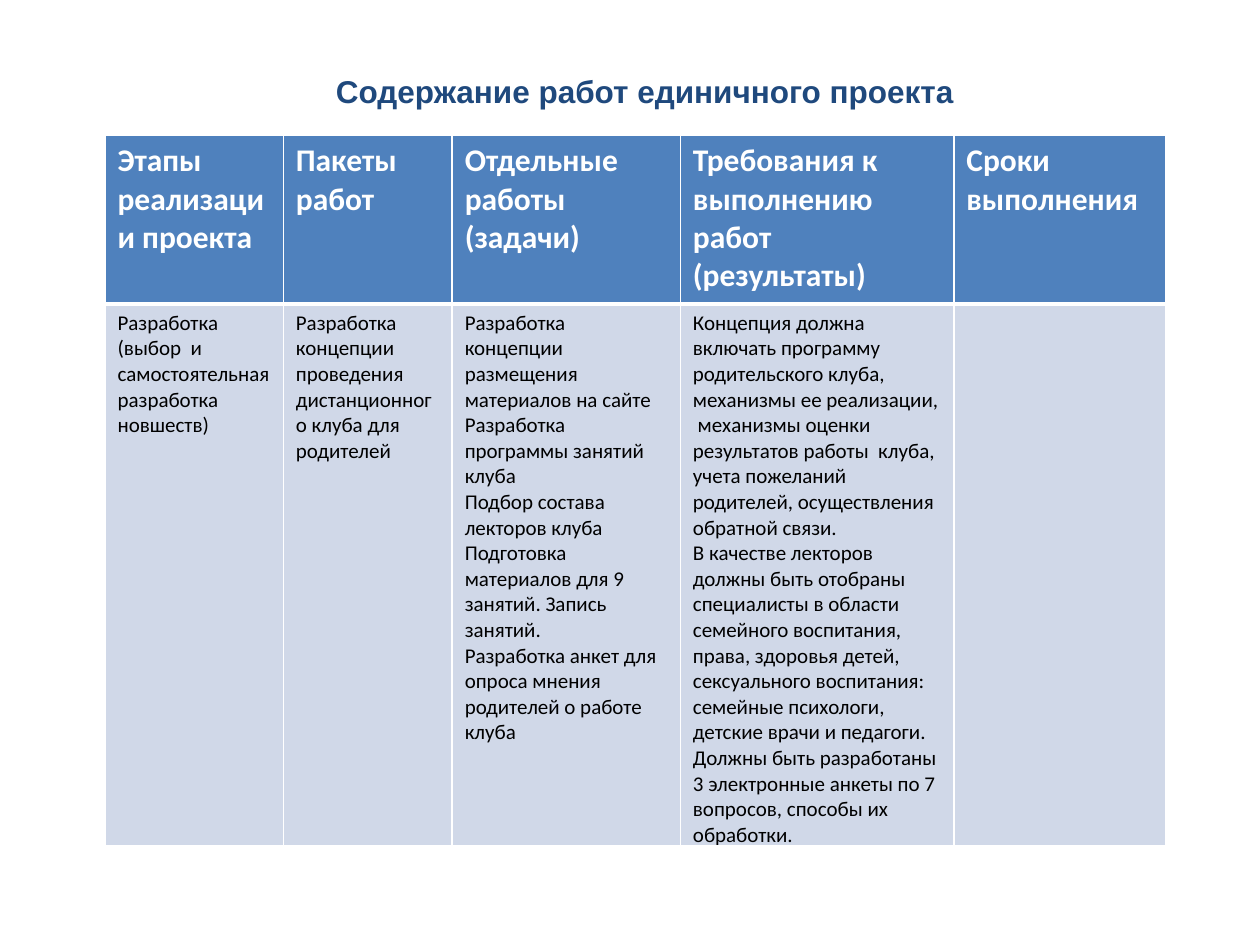
from dataclasses import dataclass

from lxml.etree import SubElement
from pptx import Presentation
from pptx.dml.color import RGBColor
from pptx.enum.text import PP_ALIGN
from pptx.oxml.ns import qn
from pptx.util import Pt


@dataclass(frozen=True)
class Theme:
    title: str = "1F497D"
    header_fill: str = "4F81BD"
    body_fill: str = "D0D8E8"
    white: str = "FFFFFF"
    black: str = "000000"
    title_font: str = "Arial"
    table_font: str = "Calibri"
    large: int = 18
    small: int = 12


THEME = Theme()


def add_text(para, text, font, size, color, bold):
    span = para.add_run()
    span.text = text
    span.font.name = font
    span.font.size = Pt(size)
    span.font.bold = bold
    span.font.color.rgb = RGBColor.from_string(color)


def add_borders(cell, top, bottom):
    """Draw white cell borders; side lines are always 1 point wide."""
    properties = cell._tc.get_or_add_tcPr()
    for tag, width in (("a:lnL", 1), ("a:lnR", 1), ("a:lnT", top), ("a:lnB", bottom)):
        line = SubElement(properties, qn(tag), w=str(Pt(width)))
        fill = SubElement(line, qn("a:solidFill"))
        SubElement(fill, qn("a:srgbClr"), val=THEME.white)


deck = Presentation()
deck.slide_width, deck.slide_height = Pt(720), Pt(540)
page = deck.slides.add_slide(deck.slide_layouts[6])

# Title
title_box = page.shapes.add_textbox(Pt(70.5), Pt(37.5), Pt(578), Pt(29))
title_box.text_frame.word_wrap = True
para = title_box.text_frame.paragraphs[0]
para.alignment = PP_ALIGN.CENTER
para._p.get_or_add_pPr().set("indent", str(Pt(18)))
add_text(para, "Содержание работ единичного проекта",
         THEME.title_font, THEME.large, THEME.title, True)

# Table of work: column width, heading, paragraphs
columns = [
    (101.9, "Этапы реализации проекта", [
        "Разработка",
        "(выбор  и самостоятельная разработка новшеств)",
    ]),
    (96.5, "Пакеты работ", [
        "Разработка концепции проведения дистанционного клуба для родителей",
    ]),
    (130.4, "Отдельные работы (задачи)", [
        "Разработка концепции размещения материалов на сайте",
        "Разработка программы занятий клуба",
        "Подбор состава лекторов клуба",
        "Подготовка материалов для 9 занятий. Запись занятий.",
        "Разработка анкет для опроса мнения родителей о работе клуба",
    ]),
    (156.3, "Требования к выполнению работ (результаты)", [
        "Концепция должна включать программу родительского клуба, механизмы ее "
        "реализации,  механизмы оценки результатов работы  клуба, учета пожеланий "
        "родителей, осуществления обратной связи.",
        "В качестве лекторов должны быть отобраны специалисты в области семейного "
        "воспитания, права, здоровья детей, сексуального воспитания: семейные "
        "психологи, детские врачи и педагоги.",
        "Должны быть разработаны 3 электронные анкеты по 7 вопросов, способы их "
        "обработки.",
    ]),
    (121, "Сроки выполнения", []),
]
row_heights = (96.5, 309.5)
table = page.shapes.add_table(
    len(row_heights), len(columns), Pt(60), Pt(77.3),
    Pt(sum(width for width, _, _ in columns)), Pt(sum(row_heights))).table
for row, height in zip(table.rows, row_heights):
    row.height = Pt(height)

for index, (width, heading, works) in enumerate(columns):
    table.columns[index].width = Pt(width)
    rows = (
        ([heading], THEME.large, THEME.white, True, THEME.header_fill, 1, 3),
        (works, THEME.small, THEME.black, False, THEME.body_fill, 3, 1),
    )
    for row_index, (texts, size, color, bold, fill, top, bottom) in enumerate(rows):
        cell = table.cell(row_index, index)
        add_borders(cell, top, bottom)
        cell.fill.solid()
        cell.fill.fore_color.rgb = RGBColor.from_string(fill)
        frame = cell.text_frame
        for number, text in enumerate(texts):
            para = frame.add_paragraph() if number else frame.paragraphs[0]
            add_text(para, text, THEME.table_font, size, color, bold)

deck.save("out.pptx")
